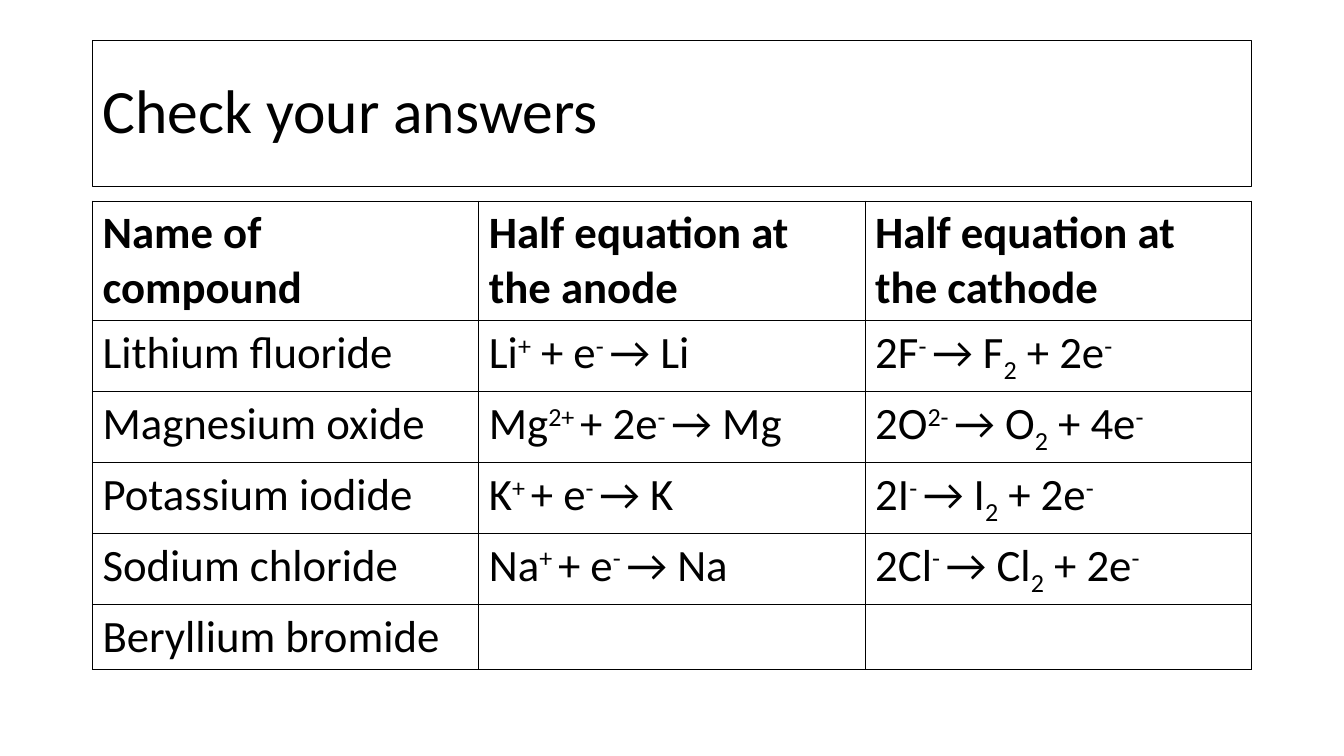
from lxml import etree
from pptx import Presentation
from pptx import util as u
from pptx.dml.color import RGBColor
from pptx.enum import text
from pptx.oxml import ns

BLACK = RGBColor(0x00, 0x00, 0x00)
WHITE = RGBColor(0xFF, 0xFF, 0xFF)
LEFT, WIDTH = u.Cm(2.33), u.Cm(29.21)
SHIFTS = {"^": "30000", "_": "-25000"}
ROWS = [
    ("Name of compound", "Half equation at the anode", "Half equation at the cathode"),
    ("Lithium fluoride", "Li|^+| + e|^- |→ Li", "2F|^- |→ F|_2| + 2e|^-"),
    ("Magnesium oxide", "Mg|^2+ |+ 2e|^- |→ Mg", "2O|^2- |→ O|_2| + 4e|^-"),
    ("Potassium iodide", "K|^+ |+ e|^- |→ K", "2I|^- |→ I|_2| + 2e|^-"),
    ("Sodium chloride", "Na|^+ |+ e|^- |→ Na", "2Cl|^- |→ Cl|_2| + 2e|^-"),
    ("Beryllium bromide", "", ""),
]


class Deck:
    def __init__(self):
        self.prs = Presentation()
        self.prs.slide_width, self.prs.slide_height = u.Cm(33.87), u.Cm(19.05)
        self.slide = self.prs.slides.add_slide(self.prs.slide_layouts[5])
        self.style = {"name": "Calibri"}

    def label(self, para, words, **extra):
        for part in filter(None, words.split("|")):
            shift = SHIFTS.get(part[0])
            run = para.add_run()
            run.text = part[1:] if shift else part
            for key, val in {**self.style, **extra}.items():
                setattr(run.font, key, val)
            run.font.color.rgb = BLACK
            if shift:
                run.font._element.set("baseline", shift)

    def title(self, words, top, height):
        box = self.slide.shapes.title
        place = {"left": LEFT, "top": top, "width": WIDTH, "height": height}
        for key, val in place.items():
            setattr(box, key, val)
        box.line.color.rgb = BLACK
        box.line.width = u.Pt(0.75)
        frame = box.text_frame
        frame.auto_size = text.MSO_AUTO_SIZE.NONE
        frame.vertical_anchor = text.MSO_ANCHOR.MIDDLE
        para = frame.paragraphs[0]
        para.alignment = text.PP_ALIGN.LEFT
        para.line_spacing = 0.9
        self.label(para, words, size=u.Pt(44))

    def edge(self, cell):
        props = cell._tc.get_or_add_tcPr()
        for side in ("a:lnL", "a:lnR", "a:lnT", "a:lnB"):
            line = etree.SubElement(props, ns.qn(side), w=str(u.Pt(1)))
            fill = etree.SubElement(line, ns.qn("a:solidFill"))
            etree.SubElement(fill, ns.qn("a:srgbClr"), val=str(BLACK))

    def table(self, rows, top, height):
        frame = self.slide.shapes.add_table(
            len(rows), len(rows[0]), LEFT, top, WIDTH, height)
        grid = frame.table
        grid.horz_banding = False
        for r, row in enumerate(rows):
            grid.rows[r].height = u.Cm(1.03)
            for c, words in enumerate(row):
                cell = grid.cell(r, c)
                self.edge(cell)
                cell.fill.solid()
                cell.fill.fore_color.rgb = WHITE
                self.label(cell.text_frame.paragraphs[0], words,
                           size=u.Pt(32), bold=r == 0)
        frame.height = height


def main():
    deck = Deck()
    deck.title("Check your answers", u.Cm(1.01), u.Cm(3.68))
    deck.table(ROWS, u.Cm(5.07), u.Cm(11))
    deck.prs.save("out.pptx")


if __name__ == "__main__":
    main()
